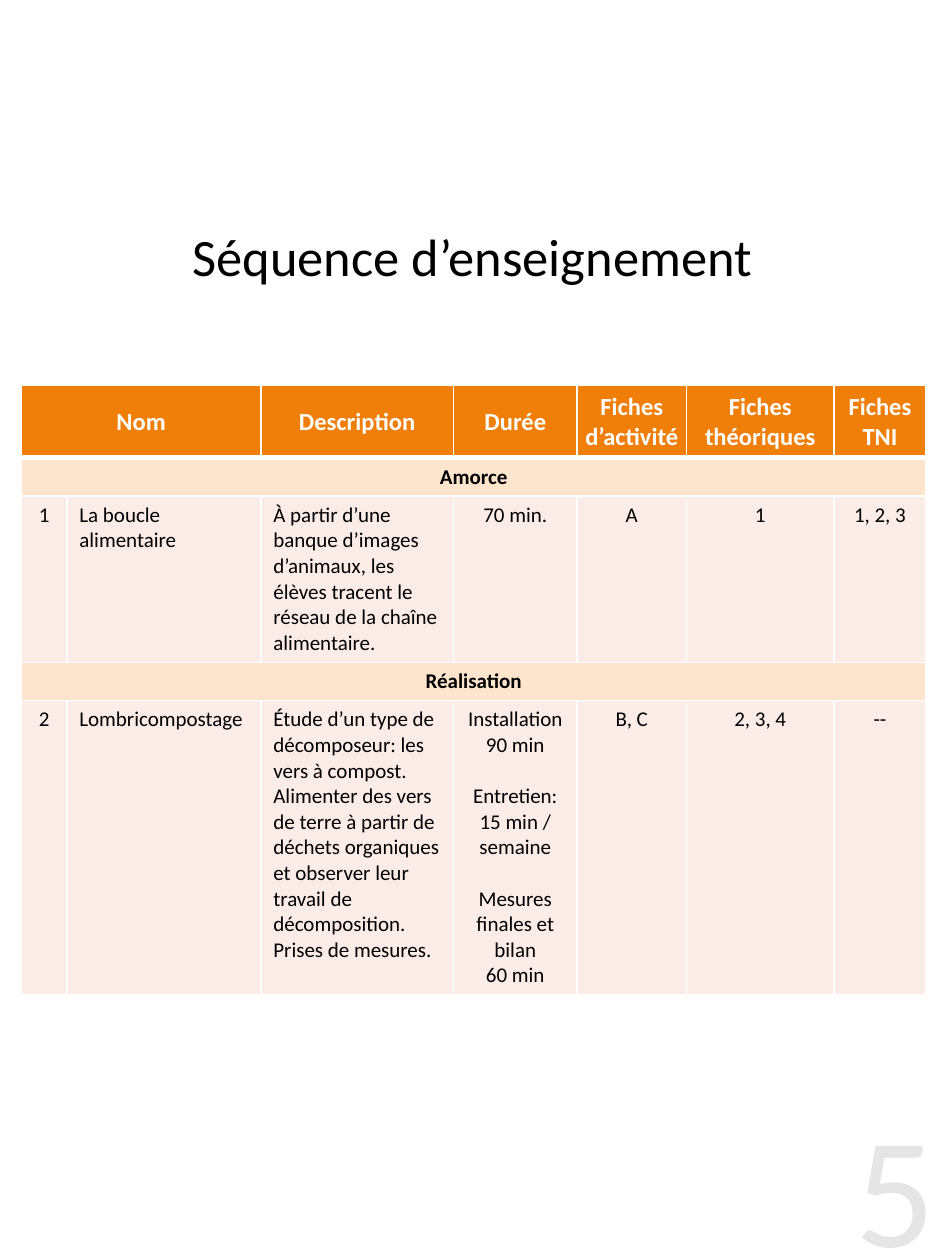
from dataclasses import dataclass

from lxml import etree
from pptx import Presentation
from pptx.dml.color import RGBColor
from pptx.enum import text as t
from pptx.oxml import ns
from pptx.util import Inches, Pt


@dataclass
class Theme:
    font: str = "Calibri"
    black: str = "000000"
    white: str = "FFFFFF"
    head: str = "F07F09"
    band: str = "FDE5CD"
    body: str = "FCECE7"
    pale: str = "E5E5E5"
    title_size: int = 30
    head_size: int = 14
    body_size: int = 12
    page_size: int = 90


theme = Theme()


def write(frame, text, size=theme.body_size, color=theme.black, bold=False,
          align=t.PP_ALIGN.CENTER, gap=0):
    """Fill a frame: a line break starts a paragraph, a double one adds a gap."""
    frame.word_wrap = True
    para = frame.paragraphs[0]
    for i, block in enumerate(text.split("\n\n")):
        for j, line in enumerate(block.split("\n")):
            if i or j:
                para = frame.add_paragraph()
            para.alignment = align
            para.space_before = Pt(gap if i and not j else 0)
            run = para.add_run()
            run.text = line
            run.font.name = theme.font
            run.font.size = Pt(size)
            run.font.bold = bold
            run.font.color.rgb = RGBColor.from_string(color)


def edge(cell, top, bottom):
    """Draw white borders; top and bottom are widths in points."""
    props = cell._tc.get_or_add_tcPr()
    sides = [("lnL", 1), ("lnR", 1), ("lnT", top), ("lnB", bottom)]
    for i, (side, width) in enumerate(sides):
        line = etree.Element(ns.qn("a:" + side), w=str(Pt(width)))
        fill = etree.SubElement(line, ns.qn("a:solidFill"))
        etree.SubElement(fill, ns.qn("a:srgbClr"), val=theme.white)
        props.insert(i, line)


deck = Presentation()
deck.slide_width, deck.slide_height = Inches(7.5), Inches(10)
slide = deck.slides.add_slide(deck.slide_layouts[5])

# Title
title = slide.shapes.title
title.left, title.top = Inches(0), Inches(1.62)
title.width, title.height = Inches(7.5), Inches(0.82)
title.text_frame.vertical_anchor = t.MSO_ANCHOR.MIDDLE
write(title.text_frame, "Séquence d’enseignement", size=theme.title_size)

# Lesson table: a row with a single text spans all columns
rows = [
    ["Nom", "", "Description", "Durée", "Fiches d’activité",
     "Fiches théoriques", "Fiches TNI"],
    ["Amorce"],
    ["1", "La boucle alimentaire",
     "À partir d’une banque d’images d’animaux, les élèves tracent le réseau "
     "de la chaîne alimentaire.",
     "70 min.", "A", "1", "1, 2, 3"],
    ["Réalisation"],
    ["2", "Lombricompostage",
     "Étude d’un type de décomposeur: les vers à compost. Alimenter des vers "
     "de terre à partir de déchets organiques et observer leur travail de "
     "décomposition. Prises de mesures.",
     "Installation\n90 min\n\nEntretien:\n15 min / semaine\n\n"
     "Mesures finales et bilan\n60 min",
     "B, C", "2, 3, 4", "--"],
]
widths = [0.36, 1.54, 1.53, 0.98, 0.87, 1.17, 0.73]
heights = [0.57, 0.3, 1.32, 0.3, 2.33]

table = slide.shapes.add_table(
    len(rows), len(widths), Inches(0.17), Inches(3.06),
    Inches(sum(widths)), Inches(sum(heights))).table
for col, width in zip(table.columns, widths):
    col.width = Inches(width)
for row, height in zip(table.rows, heights):
    row.height = Inches(height)

for r, texts in enumerate(rows):
    head, band = r == 0, len(texts) == 1
    shade = theme.head if head else theme.band if band else theme.body
    for c in range(len(widths)):
        cell = table.cell(r, c)
        cell.fill.solid()
        cell.fill.fore_color.rgb = RGBColor.from_string(shade)
        edge(cell, top=3 if r < 2 and not head else 1, bottom=3 if head else 1)
        if head:
            cell.vertical_anchor = t.MSO_ANCHOR.MIDDLE
            if c > 2:
                cell.margin_left = cell.margin_right = Inches(0.04)
        if c >= len(texts) or not texts[c]:
            continue
        left = not head and c in (1, 2)
        write(cell.text_frame, texts[c], bold=head or band, gap=14.65,
              size=theme.head_size if head else theme.body_size,
              color=theme.white if head else theme.black,
              align=t.PP_ALIGN.LEFT if left else t.PP_ALIGN.CENTER)
    if band:
        table.cell(r, 0).merge(table.cell(r, len(widths) - 1))
table.cell(0, 0).merge(table.cell(0, 1))

# Page number
page = slide.shapes.add_textbox(
    Inches(6.42), Inches(8.65), Inches(1), Inches(1.35)).text_frame
page.margin_left = page.margin_right = page.margin_top = page.margin_bottom = 0
write(page, "5", size=theme.page_size, color=theme.pale,
      align=t.PP_ALIGN.RIGHT)

deck.save("out.pptx")
